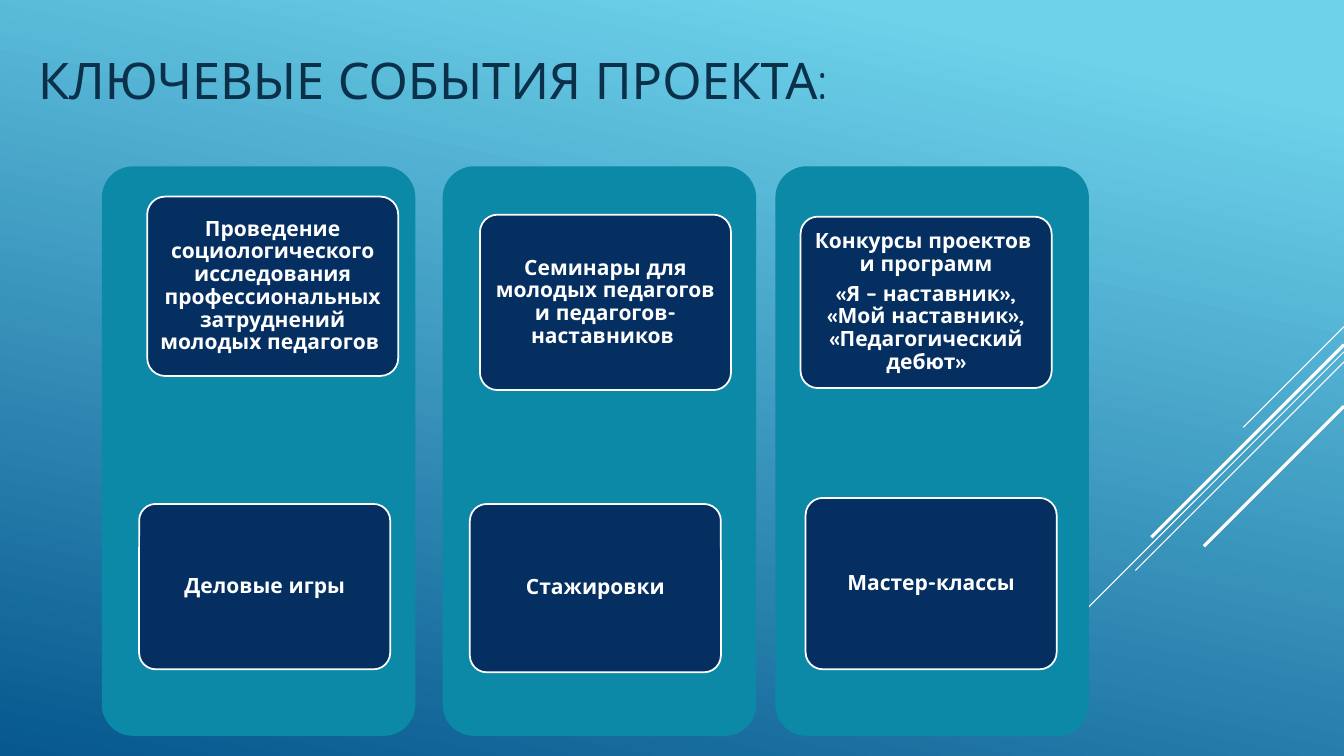
from dataclasses import dataclass

from lxml.etree import SubElement
from pptx import Presentation
from pptx.dml.color import RGBColor as Rgb
from pptx.enum.shapes import MSO_CONNECTOR as Conn, MSO_SHAPE as Kind
from pptx.enum.text import MSO_ANCHOR as Anchor, PP_ALIGN as Align
from pptx.oxml.ns import qn
from pptx.util import Inches, Pt

WIDE, HIGH = 13.33, 7.5


@dataclass(frozen=True)
class Theme:
    font: str = "Quicksand"
    sky: str = "6ED2EB"
    deep: str = "06588E"
    ink: str = "0A304A"
    teal: str = "0D89A8"
    navy: str = "052F61"
    white: str = "FFFFFF"
    title: float = 36
    body: float = 15
    edge: float = 1.25


def style(item, values):
    for name, value in values.items():
        setattr(item, name, value)


class Deck:
    """Holds the theme and the slide being drawn."""

    def __init__(self, slide, theme):
        self.slide, self.theme = slide, theme
        self.shapes = slide.shapes

    def back(self):
        fill = self.slide.background.fill
        fill.gradient()
        fill.gradient_angle = 258
        stops = ((0.1, self.theme.sky), (1, self.theme.deep))
        for stop, (place, color) in zip(fill.gradient_stops, stops):
            stop.position = place
            stop.color.rgb = Rgb.from_string(color)

    def ray(self, top, reach, width):
        """Draw a 45-degree line down and left from the right edge."""
        ends = (WIDE, top, WIDE - reach, top + reach)
        line = self.shapes.add_connector(Conn.STRAIGHT, *map(Inches, ends))
        line.line.color.rgb = Rgb.from_string(self.theme.white)
        line.line.width = Pt(width)
        SubElement(line._element.spPr, qn("a:effectLst"))

    def label(self, shape, paras, size, color, frame, para):
        """Fill a shape with paragraphs of one look."""
        text = shape.text_frame
        style(text, {"word_wrap": True, "vertical_anchor": Anchor.MIDDLE, **frame})
        text.text = "\n".join(paras)
        for item in text.paragraphs:
            style(item, para)
            for run in item.runs:
                style(run.font, {"name": self.theme.font, "size": Pt(size),
                                 "bold": size == self.theme.body})
                run.font.color.rgb = Rgb.from_string(color)

    def title(self, text, *area):
        box = self.shapes.add_textbox(*map(Inches, area))
        self.label(box, [text], self.theme.title, self.theme.ink, {},
                   {"alignment": Align.LEFT, "line_spacing": 0.9})

    def panel(self, area, color):
        shape = self.shapes.add_shape(Kind.ROUNDED_RECTANGLE, *map(Inches, area))
        shape.adjustments[0] = 0.1
        shape.shadow.inherit = False
        shape.fill.solid()
        shape.fill.fore_color.rgb = Rgb.from_string(color)
        shape.line.fill.background()
        return shape

    def card(self, area, paras):
        shape = self.panel(area, self.theme.navy)
        shape.line.color.rgb = Rgb.from_string(self.theme.white)
        shape.line.width = Pt(self.theme.edge)
        side, edge = Inches(0.04), Inches(0.03)
        self.label(shape, paras, self.theme.body, self.theme.white,
                   {"margin_left": side, "margin_right": side,
                    "margin_top": edge, "margin_bottom": edge},
                   {"alignment": Align.CENTER, "line_spacing": 0.9,
                    "space_after": Pt(5)})


RAYS = ((3.24, 1, 0.75), (3.49, 3.26, 0.75), (3.59, 2.07, 0.75),
        (3.42, 1.91, 2.25), (4.03, 1.39, 2.25))

# Column left, then its cards: left, top, height, paragraphs
COLUMNS = (
    (1.01, (
        (1.46, 1.95, 1.78, ["Проведение социологического исследования "
                            "профессиональных затруднений молодых педагогов "]),
        (1.38, 5, 1.64, ["Деловые игры"]))),
    (4.39, (
        (4.76, 2.13, 1.74, ["Семинары для молодых педагогов "
                            "и педагогов-наставников "]),
        (4.66, 5, 1.67, ["Стажировки"]))),
    (7.69, (
        (7.94, 2.15, 1.7, ["Конкурсы проектов \vи программ",
                           "«Я – наставник», «Мой наставник», "
                           "«Педагогический дебют»"]),
        (7.99, 4.94, 1.7, ["Мастер-классы"]))),
)


def main():
    show = Presentation()
    style(show, {"slide_width": Inches(WIDE), "slide_height": Inches(HIGH)})
    theme = Theme()
    deck = Deck(show.slides.add_slide(show.slide_layouts[6]), theme)
    deck.back()
    for ray in RAYS:
        deck.ray(*ray)
    deck.title("КЛЮЧЕВЫЕ СОБЫТИЯ ПРОЕКТА:", 0.28, 0, 8.03, 1.65)
    for start, cards in COLUMNS:
        deck.panel((start, 1.65, 3.11, 5.65), theme.teal)
        for left, top, height, paras in cards:
            deck.card((left, top, 2.49, height), paras)
    show.save("out.pptx")


if __name__ == "__main__":
    main()
